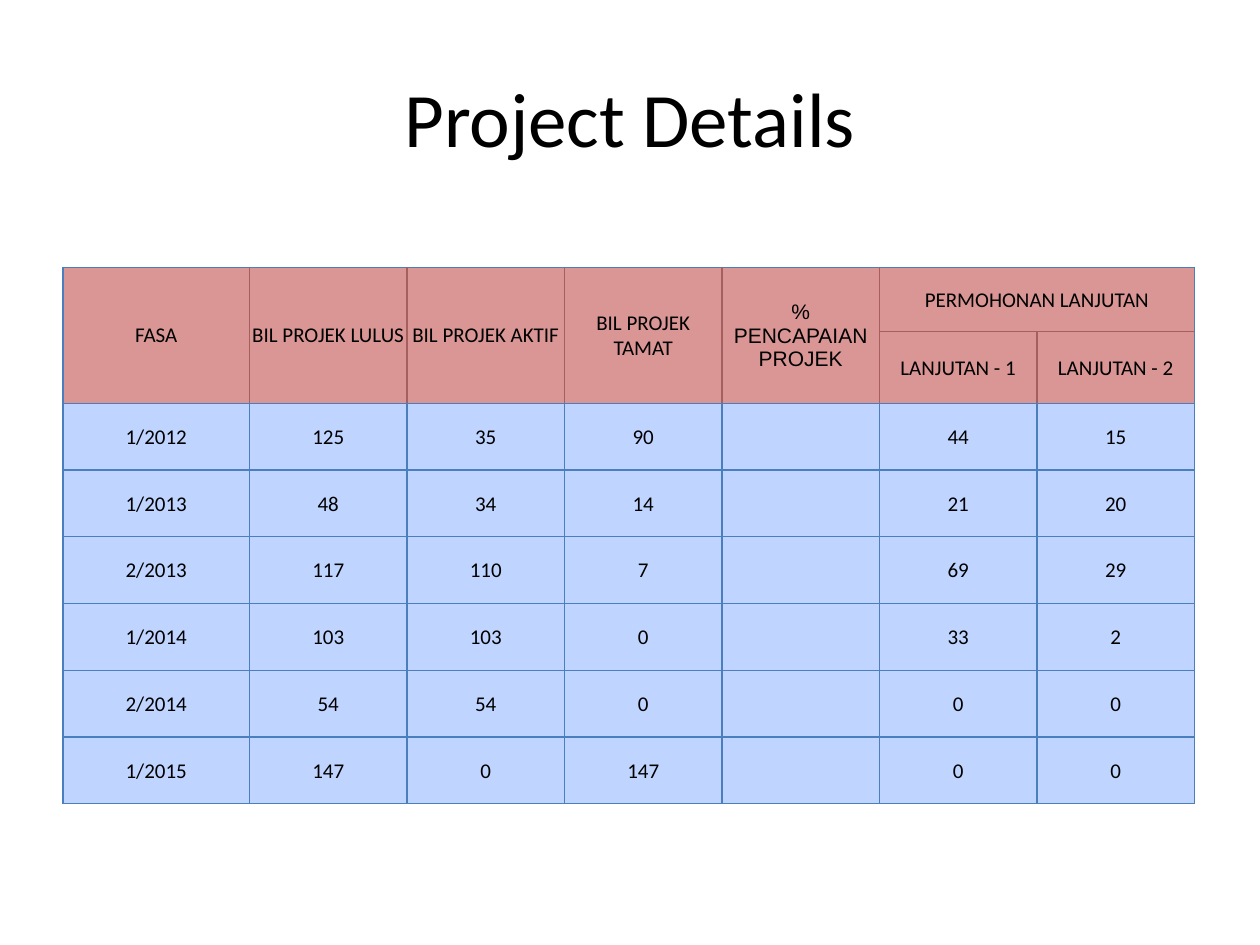
from typing import NamedTuple

from lxml.etree import SubElement
from pptx import Presentation
from pptx.dml.color import RGBColor
from pptx.enum.text import MSO_ANCHOR, PP_ALIGN
from pptx.oxml.ns import qn
from pptx.util import Inches, Pt

COLORS = {
    "text": "000000",
    "header": "D99694",
    "body": "BFD5FF",
    "border": "4B7EBC",
    "header_border": "A65F5F",
}
COLUMN_WIDTHS = [1.48] + [1.25] * 6
ROW_HEIGHTS = [0.51, 0.57] + [0.53] * 6
HEADER_ROWS = 2


class HeaderCell(NamedTuple):
    text: str
    row: int
    column: int
    row_span: int = 1
    column_span: int = 1
    font: str = "Calibri"


HEADERS = [
    HeaderCell("FASA", 0, 0, row_span=2),
    HeaderCell("BIL PROJEK LULUS", 0, 1, row_span=2),
    HeaderCell("BIL PROJEK AKTIF", 0, 2, row_span=2),
    HeaderCell("BIL PROJEK TAMAT", 0, 3, row_span=2),
    HeaderCell("% PENCAPAIAN PROJEK", 0, 4, row_span=2, font="Arial"),
    HeaderCell("PERMOHONAN LANJUTAN", 0, 5, column_span=2),
    HeaderCell("LANJUTAN - 1", 1, 5),
    HeaderCell("LANJUTAN - 2", 1, 6),
]
PROJECTS = [
    ("1/2012", "125", "35", "90", "", "44", "15"),
    ("1/2013", "48", "34", "14", "", "21", "20"),
    ("2/2013", "117", "110", "7", "", "69", "29"),
    ("1/2014", "103", "103", "0", "", "33", "2"),
    ("2/2014", "54", "54", "0", "", "0", "0"),
    ("1/2015", "147", "0", "147", "", "0", "0"),
]


def format_text(text_frame, size: float, font: str) -> None:
    for paragraph in text_frame.paragraphs:
        paragraph.alignment = PP_ALIGN.CENTER
        for run in paragraph.runs:
            run.font.size = Pt(size)
            run.font.name = font
            run.font.color.rgb = RGBColor.from_string(COLORS["text"])


def write_cell(cell, text: str, font: str = "Calibri") -> None:
    cell.text_frame.text = text
    format_text(cell.text_frame, 12, font)


def set_borders(cell, colors: dict[str, str]) -> None:
    properties = cell._tc.get_or_add_tcPr()
    for index, (side, color) in enumerate(colors.items()):
        line = SubElement(properties, qn(f"a:ln{side}"), w=str(Pt(0.75)))
        fill = SubElement(line, qn("a:solidFill"))
        SubElement(fill, qn("a:srgbClr"), val=color)
        properties.insert(index, line)


def style_cell(cell, row: int, column: int) -> None:
    """Set fill, margins and borders; lines between header cells are red."""
    is_header = row < HEADER_ROWS
    cell.fill.solid()
    cell.fill.fore_color.rgb = RGBColor.from_string(
        COLORS["header" if is_header else "body"])
    cell.vertical_anchor = MSO_ANCHOR.MIDDLE
    cell.margin_left = cell.margin_right = cell.margin_top = Inches(0.01)
    cell.margin_bottom = 0

    last_row, last_column = row, column
    if cell.is_merge_origin:
        last_row += cell.span_height - 1
        last_column += cell.span_width - 1
    inner_sides = {
        "L": column > 0,
        "R": last_column < len(COLUMN_WIDTHS) - 1,
        "T": row > 0,
        "B": last_row < HEADER_ROWS - 1,
    }
    set_borders(cell, {
        side: COLORS["header_border" if is_header and inner else "border"]
        for side, inner in inner_sides.items()
    })


def add_project_table(slide) -> None:
    table = slide.shapes.add_table(
        len(ROW_HEIGHTS), len(COLUMN_WIDTHS), Inches(0.5), Inches(2.12),
        Inches(sum(COLUMN_WIDTHS)), Inches(sum(ROW_HEIGHTS))).table
    for column, width in zip(table.columns, COLUMN_WIDTHS):
        column.width = Inches(width)
    for row, height in zip(table.rows, ROW_HEIGHTS):
        row.height = Inches(height)

    for header in HEADERS:
        cell = table.cell(header.row, header.column)
        if header.row_span > 1 or header.column_span > 1:
            cell.merge(table.cell(header.row + header.row_span - 1,
                                  header.column + header.column_span - 1))
        write_cell(cell, header.text, header.font)
    for row, project in enumerate(PROJECTS, start=HEADER_ROWS):
        for column, value in enumerate(project):
            if value:
                write_cell(table.cell(row, column), value)
    for row in range(len(ROW_HEIGHTS)):
        for column in range(len(COLUMN_WIDTHS)):
            style_cell(table.cell(row, column), row, column)


def add_title(slide, text: str) -> None:
    title = slide.shapes.title
    title.left, title.top = Inches(0.5), Inches(0.3)
    title.width, title.height = Inches(9), Inches(1.25)
    title.text_frame.text = text
    title.text_frame.vertical_anchor = MSO_ANCHOR.MIDDLE
    format_text(title.text_frame, 44, "Calibri")


def main() -> None:
    presentation = Presentation()
    presentation.slide_width = Inches(10)
    presentation.slide_height = Inches(7.5)
    slide = presentation.slides.add_slide(presentation.slide_layouts[5])
    add_title(slide, "Project Details")
    add_project_table(slide)
    presentation.save("out.pptx")


if __name__ == "__main__":
    main()
